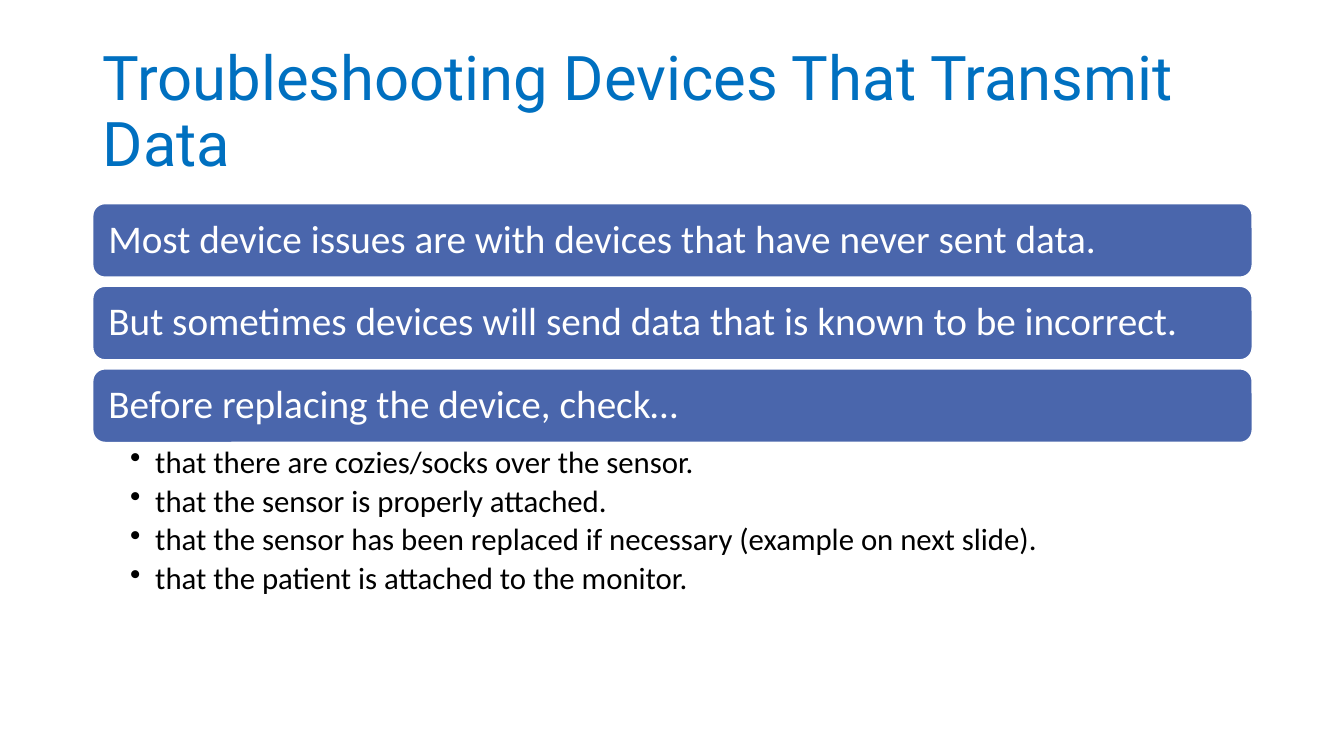
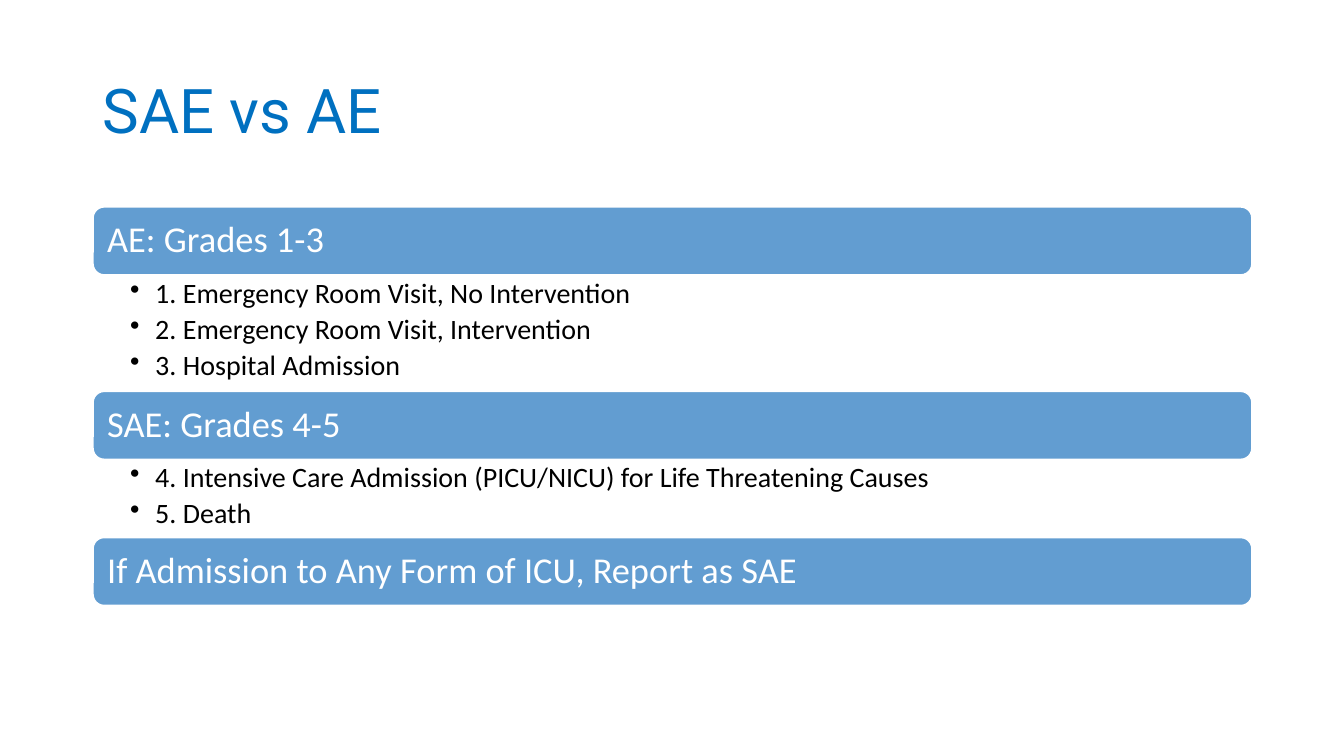
import pptx
import pptx.dml.color
import pptx.enum.shapes
import pptx.enum.text
import pptx.util
from lxml import etree
from pptx.util import Inches, Pt

BLUE_TITLE, WHITE, BLACK = "0070C0", "FFFFFF", "000000"
LEFT, WIDTH = Inches(0.92), Inches(11.5)
MIDDLE = pptx.enum.text.MSO_ANCHOR.MIDDLE
TOP = pptx.enum.text.MSO_ANCHOR.TOP
ROUNDED = pptx.enum.shapes.MSO_SHAPE.ROUNDED_RECTANGLE


def rgb(color):
    return pptx.dml.color.RGBColor.from_string(color)


def write(sp, lines, size, color, font="Calibri", anchor=MIDDLE, insets=None, bullet=False):
    """Fill a shape with left-aligned paragraphs; insets are left, top, right, bottom in inches."""
    tf = sp.text_frame
    tf.text = "\n".join(lines)
    tf.word_wrap = True
    tf.auto_size = pptx.enum.text.MSO_AUTO_SIZE.NONE
    tf.vertical_anchor = anchor
    if insets:
        tf.margin_left, tf.margin_top, tf.margin_right, tf.margin_bottom = map(Inches, insets)
    for p in tf.paragraphs:
        p.alignment = pptx.enum.text.PP_ALIGN.LEFT
        p.line_spacing = 0.9
        if bullet:
            p.space_after = Pt(4)
            pPr = p._p.get_or_add_pPr()
            pPr.set("marL", str(Inches(0.25)))
            pPr.set("indent", str(-Inches(0.25)))
            bu = etree.SubElement(pPr, pptx.oxml.ns.qn("a:buChar"))
            bu.set("char", "•")
        for r in p.runs:
            r.font.name = font
            r.font.size = Pt(size)
            r.font.color.rgb = rgb(color)


# Each section is a bar heading, its bullets and the height of the bullet list.
slides = [
    dict(
        title="Troubleshooting Devices That Transmit Data",
        fill="4A66AC", line=1, top=2.02, bar=0.73, gap=0.09,
        bar_size=28, list_size=22, inset=0.12, list_right=0.22,
        sections=[
            ("Most device issues are with devices that have never sent data.", [], 0),
            ("But sometimes devices will send data that is known to be incorrect.", [], 0),
            ("Before replacing the device, check…", [
                "that there are cozies/socks over the sensor.",
                "that the sensor is properly attached.",
                "that the sensor has been replaced if necessary (example on next slide).",
                "that the patient is attached to the monitor.",
            ], 1.65),
        ],
    ),
    dict(
        title="SAE vs AE",
        fill="629DD1", line=1.5, top=2.05, bar=0.68, gap=0,
        bar_size=26, list_size=20, inset=0.11, list_right=0.2,
        sections=[
            ("AE: Grades 1-3", [
                "1. Emergency Room Visit, No Intervention",
                "2. Emergency Room Visit, Intervention",
                "3. Hospital Admission",
            ], 1.15),
            ("SAE: Grades 4-5", [
                "4. Intensive Care Admission (PICU/NICU) for Life Threatening Causes",
                "5. Death",
            ], 0.77),
            ("If Admission to Any Form of ICU, Report as SAE", [], 0),
        ],
    ),
]

prs = pptx.Presentation()
prs.slide_width, prs.slide_height = Inches(13.33), Inches(7.5)

for d in slides:
    s = prs.slides.add_slide(prs.slide_layouts[5])
    title = s.shapes.title
    title.left, title.top, title.width, title.height = LEFT, Inches(0.4), WIDTH, Inches(1.45)
    write(title, [d["title"]], 44, BLUE_TITLE, font="Roboto")

    y = d["top"]
    for heading, bullets, list_height in d["sections"]:
        sp = s.shapes.add_shape(ROUNDED, LEFT, Inches(y), WIDTH, Inches(d["bar"]))
        sp.shadow.inherit = False
        sp.fill.solid()
        sp.fill.fore_color.rgb = rgb(d["fill"])
        sp.line.color.rgb = rgb(WHITE)
        sp.line.width = Pt(d["line"])
        write(sp, [heading], d["bar_size"], WHITE, insets=[d["inset"]] * 4)
        y += d["bar"]
        if bullets:
            box = s.shapes.add_textbox(LEFT, Inches(y), WIDTH, Inches(list_height))
            write(box, bullets, d["list_size"], BLACK, anchor=TOP,
                  insets=(0.37, 0.04, d["list_right"], 0.04), bullet=True)
        y += list_height + d["gap"]

prs.save("out.pptx")
